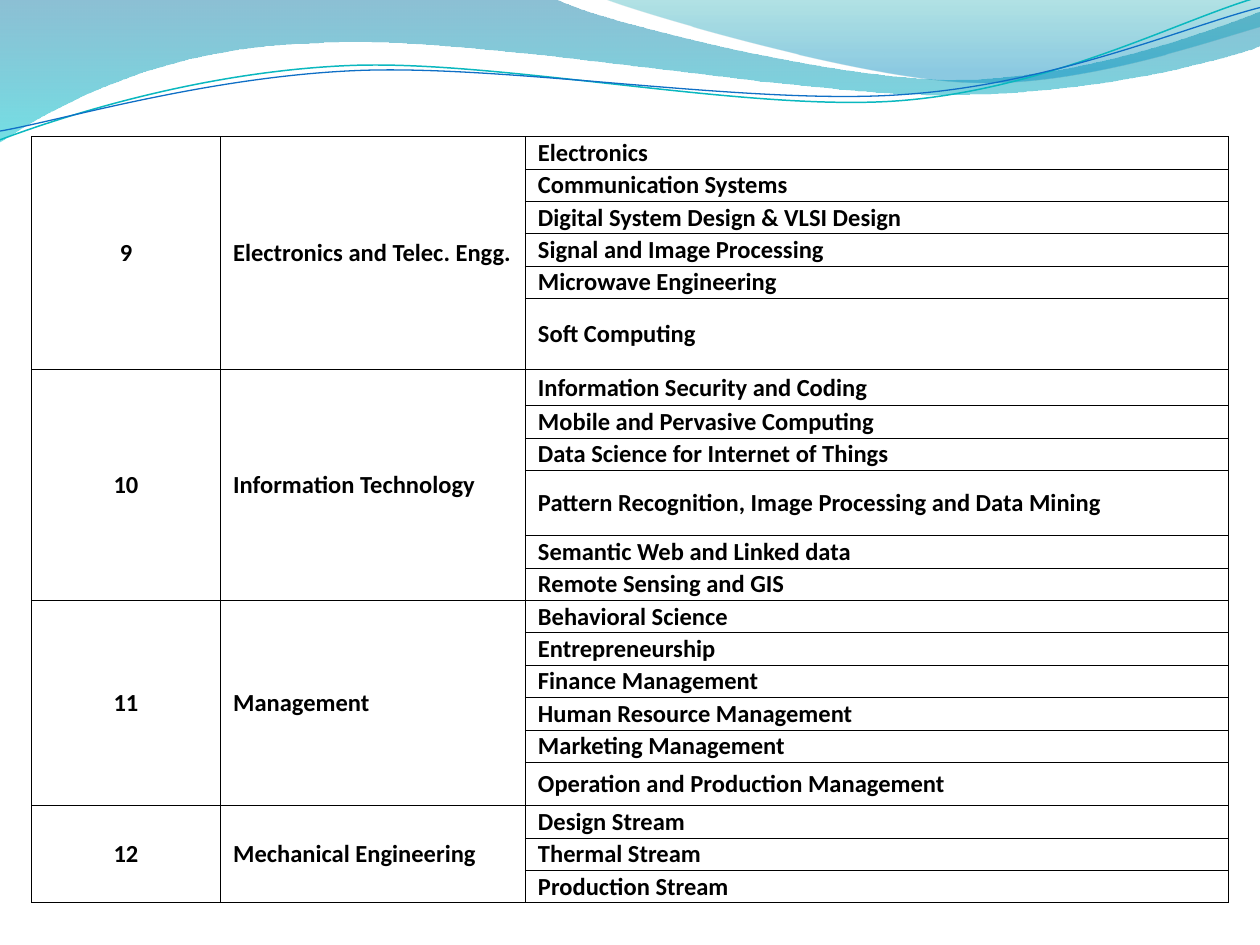
from math import cos, radians, sin

from lxml import etree
from pptx import Presentation
from pptx.dml.color import RGBColor
from pptx.enum.text import MSO_ANCHOR, PP_ALIGN
from pptx.oxml.ns import qn
from pptx.util import Pt

MIDDLE = MSO_ANCHOR.MIDDLE
CENTER = PP_ALIGN.CENTER
LEFT = PP_ALIGN.LEFT
FONT = "Calibri"
BLANK_LAYOUT = 6
ROW_HEIGHT = 18.55
TILT = 357.3
COLORS = {
    "text": "000000",
    "border": "000000",
    "wave_top": "0074A1",
    "wave_bottom": "00C6CF",
    "crest_top": "00A1A9",
    "crest_bottom": "008BBF",
    "teal_line": "0AB8BF",
    "blue_line": "0F6FC6",
}
WAVE = [
    [(0, 0)], [(316.8, -0.72)],
    [(342.72, 12.24), (478.08, 45.36), (545.76, 45.36)],
    [(614.16, 45.36), (689.76, 18.72), (720, 6.48)],
    [(720.72, 25.92)],
    [(707.76, 31.68), (626.4, 54.72), (537.12, 54)],
    [(447.84, 54), (275.04, 20.16), (185.04, 24.48)],
    [(92.88, 25.92), (33.12, 59.76), (-0.72, 81.36)],
    [(0, 0)],
]
CREST = [
    [(344.88, -0.72)],
    [(366.48, 7.92), (491.04, 44.64), (553.68, 46.8)],
    [(616.32, 49.68), (691.92, 23.04), (720, 15.12)],
    [(720, 0)], [(344.88, -0.72)],
]
TEAL_LINE = [
    [(0, 79.92)],
    [(34.56, 66.96), (113.76, 41.04), (199.44, 37.44)],
    [(284.4, 33.84), (426.96, 64.08), (513.36, 57.6)],
    [(599.76, 51.12), (675.36, 10.8), (718.56, -1.44)],
]
BLUE_LINE = [
    [(0, 74.88)],
    [(33.84, 69.12), (118.08, 43.92), (203.76, 40.32)],
    [(290.16, 36.72), (429.84, 60.48), (516.24, 54)],
    [(601.92, 48.24), (677.52, 15.12), (720, 4.32)],
]
DEPARTMENTS = [
    ("9", "Electronics and Telec. Engg.", [
        "Electronics", "Communication Systems",
        "Digital System Design & VLSI Design",
        "Signal and Image Processing", "Microwave Engineering",
        "Soft Computing"]),
    ("10", "Information Technology", [
        "Information Security and Coding", "Mobile and Pervasive Computing",
        "Data Science for Internet of Things",
        "Pattern Recognition, Image Processing and Data Mining",
        "Semantic Web and Linked data", "Remote Sensing and GIS"]),
    ("11", "Management", [
        "Behavioral Science", "Entrepreneurship", "Finance Management",
        "Human Resource Management", "Marketing Management",
        "Operation and Production Management"]),
    ("12", "Mechanical Engineering", [
        "Design Stream", "Thermal Stream", "Production Stream"]),
]
TALL_ROWS = {
    "Soft Computing": 40.5,
    "Information Security and Coding": 20.7,
    "Pattern Recognition, Image Processing and Data Mining": 37.1,
    "Operation and Production Management": 24.5,
}
COLUMN_WIDTHS = [108, 174.24, 401.76]


def color(name):
    """Return the named colour."""
    return RGBColor.from_string(COLORS[name])


def level_outline(outline, center):
    """Turn a tilted outline about its centre back to level."""
    angle = radians(-TILT)
    center_x, center_y = center
    return [[(center_x + (x - center_x) * cos(angle) - (y - center_y) * sin(angle),
              center_y + (x - center_x) * sin(angle) + (y - center_y) * cos(angle))
             for x, y in segment] for segment in outline]


def add_outline(shapes, outline, close):
    """Add a freeform whose three-point segments are Bezier curves."""
    points = [(Pt(x), Pt(y)) for segment in outline for x, y in segment]
    builder = shapes.build_freeform(*points[0])
    builder.add_line_segments(points[1:], close=close)
    shape = builder.convert_to_shape()
    shape.shadow.inherit = False
    steps = iter(list(shape.element.iter(qn("a:lnTo"))))
    for segment in outline[1:]:
        curve, *others = [next(steps) for point in segment]
        if others:
            curve.tag = qn("a:cubicBezTo")
        for step in others:
            curve.append(step[0])
            step.getparent().remove(step)
    return shape


def add_gradient_area(shapes, outline, stops):
    """Add a closed area with a translucent vertical gradient."""
    shape = add_outline(shapes, outline, True)
    shape.line.fill.background()
    shape.fill.gradient()
    shape.fill.gradient_angle = 270
    for stop, (position, name, opacity) in zip(shape.fill.gradient_stops, stops):
        stop.position = position
        stop.color.rgb = color(name)
    elements = shape.element.spPr.iter(qn("a:srgbClr"))
    for element, (position, name, opacity) in zip(elements, stops):
        etree.SubElement(element, qn("a:alpha"), val=str(opacity * 1000))


def add_wave_line(shapes, outline, center, name, width):
    """Add an open, slightly rotated curved line."""
    shape = add_outline(shapes, level_outline(outline, center), False)
    shape.rotation = TILT
    shape.fill.background()
    shape.line.color.rgb = color(name)
    shape.line.width = Pt(width)


def set_borders(cell):
    """Give a cell thin lines on all sides and no fill."""
    properties = cell._tc.get_or_add_tcPr()
    for side in ("lnL", "lnR", "lnT", "lnB"):
        line = etree.SubElement(properties, qn(f"a:{side}"), w=str(Pt(0.5)))
        fill = etree.SubElement(line, qn("a:solidFill"))
        etree.SubElement(fill, qn("a:srgbClr"), val=COLORS["border"])
    cell.fill.background()


def write_cell(cell, text, alignment):
    """Write bold text into a cell, indented when left aligned."""
    cell.vertical_anchor = MIDDLE
    paragraph = cell.text_frame.paragraphs[0]
    paragraph.alignment = alignment
    if alignment == LEFT:
        paragraph.level = 1
        properties = paragraph._p.get_or_add_pPr()
        properties.set("marL", str(Pt(7.2)))
        properties.set("indent", "0")
    run = paragraph.add_run()
    run.text = text
    run.font.name = FONT
    run.font.size = Pt(14)
    run.font.bold = True
    run.font.color.rgb = color("text")


def add_department_table(slide):
    """Add the table of departments and their specialisations."""
    subjects = [subject for department in DEPARTMENTS for subject in department[2]]
    heights = [TALL_ROWS.get(subject, ROW_HEIGHT) for subject in subjects]
    table = slide.shapes.add_table(
        len(subjects), len(COLUMN_WIDTHS), Pt(18), Pt(78),
        Pt(sum(COLUMN_WIDTHS)), Pt(sum(heights))).table
    table.first_row = table.horz_banding = False
    for column, width in zip(table.columns, COLUMN_WIDTHS):
        column.width = Pt(width)
    for row, height in zip(table.rows, heights):
        row.height = Pt(height)
    for cell in table.iter_cells():
        cell.margin_left = cell.margin_right = 0
        cell.margin_top = cell.margin_bottom = 0
        set_borders(cell)
    first = 0
    for number, name, specialisations in DEPARTMENTS:
        last = first + len(specialisations) - 1
        for column, text, alignment in ((0, number, CENTER), (1, name, LEFT)):
            table.cell(first, column).merge(table.cell(last, column))
            write_cell(table.cell(first, column), text, alignment)
        for row, subject in enumerate(specialisations, first):
            write_cell(table.cell(row, 2), subject, LEFT)
        first = last + 1


def main():
    """Build and save the slide."""
    presentation = Presentation()
    presentation.slide_width = Pt(720)
    presentation.slide_height = Pt(540)
    slide = presentation.slides.add_slide(presentation.slide_layouts[BLANK_LAYOUT])
    shapes = slide.shapes
    add_gradient_area(shapes, WAVE, [(0, "wave_top", 45), (1, "wave_bottom", 55)])
    add_gradient_area(shapes, CREST, [(0, "crest_top", 30), (0.8, "crest_bottom", 45)])
    lines = shapes.add_group_shape().shapes
    add_wave_line(lines, TEAL_LINE, (359.28, 41.4), "teal_line", 0.85)
    add_wave_line(lines, BLUE_LINE, (359.64, 42.48), "blue_line", 0.75)
    add_department_table(slide)
    presentation.save("out.pptx")


if __name__ == "__main__":
    main()
